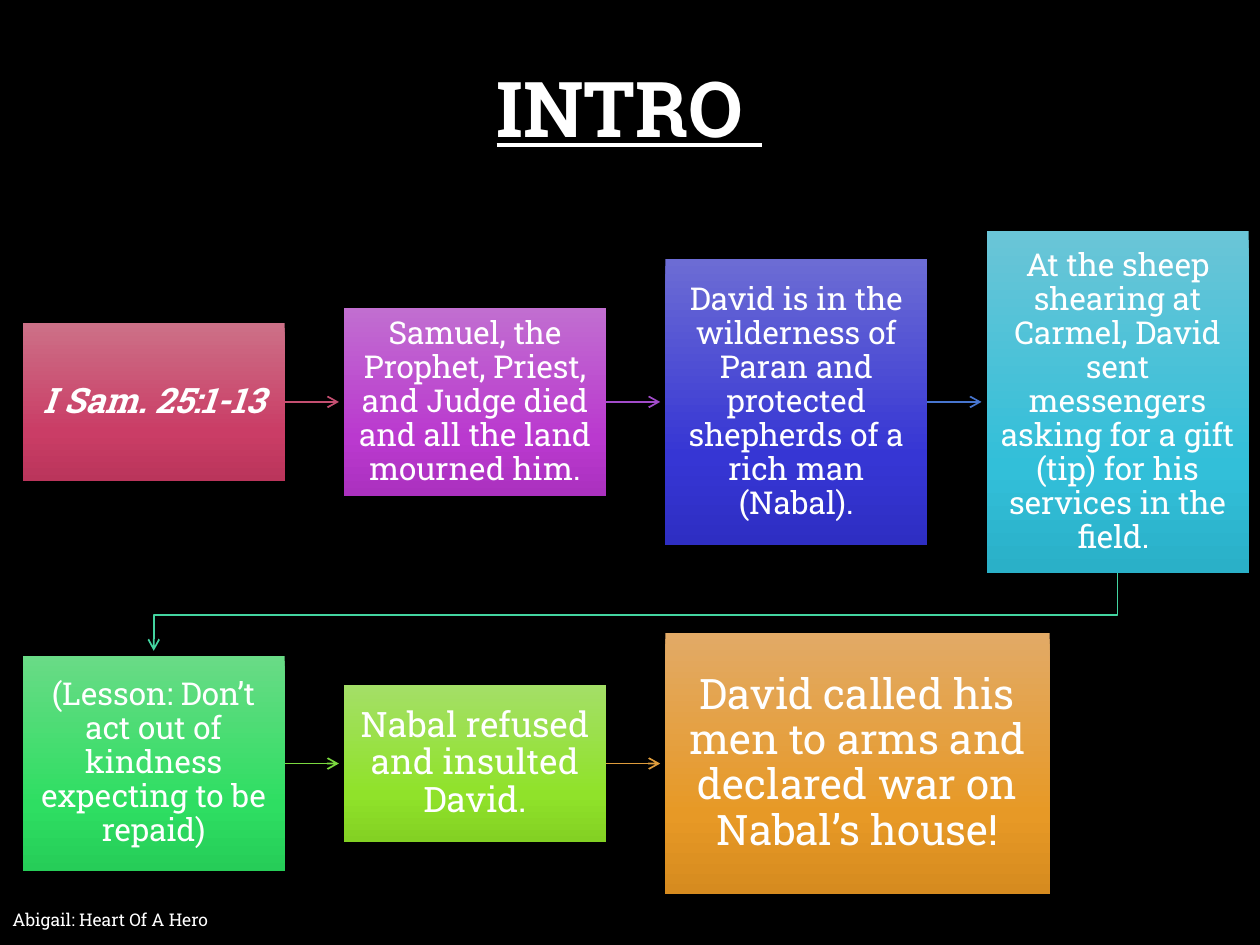
"""Build the intro slide: a two-row flow of story steps on black."""
from copy import deepcopy

from lxml import etree
from pptx import Presentation
from pptx.dml.color import RGBColor
from pptx.enum import shapes, text
from pptx.oxml.ns import qn
from pptx.util import Inches, Pt

FONT = "Roboto Slab"
BLACK = RGBColor(0, 0, 0)
WHITE = RGBColor(255, 255, 255)
ROSE = [RGBColor.from_string(c) for c in ("CC7087", "CA3D66", "BA355B")]
PLUM = [RGBColor.from_string(c) for c in ("C16ED0", "BA39CF", "AB31BF")]
BLUE = [RGBColor.from_string(c) for c in ("6C6CD4", "3636D4", "2E2EC3")]
AQUA = [RGBColor.from_string(c) for c in ("6AC5D7", "32BFD9", "2AB0C8")]
GREEN = [RGBColor.from_string(c) for c in ("69DB86", "2EDE62", "26CD58")]
LIME = [RGBColor.from_string(c) for c in ("A4DF67", "90E22A", "83D123")]
AMBER = [RGBColor.from_string(c) for c in ("E2AA66", "E79926", "D68B1F")]
ROSE_LINE = RGBColor(0xC5, 0x4F, 0x71)
PLUM_LINE = RGBColor(0xA2, 0x4B, 0xCA)
BLUE_LINE = RGBColor(0x47, 0x75, 0xCF)
TEAL_LINE = RGBColor(0x43, 0xD4, 0xA0)
LIME_LINE = RGBColor(0x7B, 0xD9, 0x40)
AMBER_LINE = RGBColor(0xDE, 0x9C, 0x3C)

LEFT, STEP, WIDE, GAP = 0.18, 2.55, 2.08, 0.04
TOP_MID, LOW_MID, TURN = 3.19, 6.06, 4.88

# words, height, width, size, bold italic, fill, colour of the arrow to the next step
TOP_ROW = [
    ("I Sam. 25:1-13", 1.25, WIDE, 20, True, ROSE, ROSE_LINE),
    ("Samuel, the Prophet, Priest, and Judge died and all the land mourned him.",
     1.49, WIDE, 18, False, PLUM, PLUM_LINE),
    ("David is in the wilderness of Paran and protected shepherds of a rich man (Nabal).",
     2.27, WIDE, 18, False, BLUE, BLUE_LINE),
    ("At the sheep shearing at Carmel, David sent messengers asking for a gift (tip) "
     "for his services in the field. ", 2.71, WIDE, 18, False, AQUA, None),
]
LOW_ROW = [
    ("(Lesson: Don’t act out of kindness expecting to be repaid)",
     1.71, WIDE, 18, False, GREEN, LIME_LINE),
    ("Nabal refused and insulted David.", 1.25, WIDE, 20, False, LIME, AMBER_LINE),
    ("David called his men to arms and declared war on Nabal’s house!",
     2.07, 3.05, 24, False, AMBER, None),
]


def write(frame, words, size, align, bold=False, italic=False, under=False):
    """Write one formatted run into a text frame and return its paragraph."""
    frame.word_wrap = True
    frame.auto_size = text.MSO_AUTO_SIZE.NONE
    frame.vertical_anchor = text.MSO_ANCHOR.MIDDLE
    para = frame.paragraphs[0]
    para.alignment = align
    run = para.add_run()
    run.text = words
    font = run.font
    font.name, font.size = FONT, Pt(size)
    font.bold, font.italic, font.underline = bold, italic, under
    font.color.rgb = WHITE
    return para


def shade(fill, tones):
    """Fill from top to bottom with three tones."""
    fill.gradient()
    fill.gradient_angle = 270
    first = fill.gradient_stops[0]._gs
    first.addnext(deepcopy(first))
    for stop, tone, place in zip(fill.gradient_stops, tones, (0, 0.69, 1)):
        stop.color.rgb = tone
        stop.position = place


def add_box(slide, left, mid, step):
    """Add one step, centred on the middle line of its row."""
    words, high, wide, size, strong, tones, _ = step
    box = slide.shapes.add_shape(
        shapes.MSO_SHAPE.RECTANGLE, Inches(left), Inches(mid - high / 2),
        Inches(wide), Inches(high))
    box.shadow.inherit = False
    box.line.fill.background()
    shade(box.fill, tones)
    frame = box.text_frame
    frame.margin_left = frame.margin_right = Inches(0.1)
    frame.margin_top = frame.margin_bottom = Inches(0.11)
    para = write(frame, words, size, text.PP_ALIGN.CENTER, strong, strong)
    para.line_spacing = 0.9


def style_line(line, color):
    """Give a line its colour, width and open arrowhead."""
    line.color.rgb = color
    line.width = Pt(1)
    etree.SubElement(line._get_or_add_ln(), qn("a:tailEnd"), type="arrow")


def add_arrow(slide, start, end, mid, color):
    """Add a level arrow between two steps."""
    arrow = slide.shapes.add_connector(
        shapes.MSO_CONNECTOR.STRAIGHT, Inches(start), Inches(mid),
        Inches(end), Inches(mid))
    style_line(arrow.line, color)
    etree.SubElement(arrow._element.spPr, qn("a:effectLst"))


def add_bend(slide, points, color):
    """Add a bent arrow through the given points."""
    spots = [(Inches(x), Inches(y)) for x, y in points]
    pen = slide.shapes.build_freeform(*spots[0])
    pen.add_line_segments(spots[1:], close=False)
    bend = pen.convert_to_shape()
    bend.fill.background()
    style_line(bend.line, color)
    bend.shadow.inherit = False


def add_row(slide, mid, steps):
    """Add a row of steps and the arrows between them."""
    for i, step in enumerate(steps):
        left = LEFT + STEP * i
        if step[-1] is not None:
            add_arrow(slide, left + WIDE, left + STEP - GAP, mid, step[-1])
        add_box(slide, left, mid, step)


def add_title(slide, words):
    """Place and format the title."""
    title = slide.shapes.title
    title.left, title.top = Inches(0.75), Inches(0.17)
    title.width, title.height = Inches(8.49), Inches(1.45)
    para = write(title.text_frame, words, 44, text.PP_ALIGN.CENTER, True, under=True)
    para.line_spacing = 0.9


def add_foot(slide, words):
    """Add the small line at the foot of the slide."""
    foot = slide.shapes.add_textbox(Inches(0), Inches(7.1), Inches(5.47), Inches(0.4))
    para = write(foot.text_frame, words, 10, text.PP_ALIGN.LEFT)
    para.space_after = Pt(6)


def main():
    """Build and save the slide."""
    deck = Presentation()
    deck.slide_width, deck.slide_height = Inches(10), Inches(7.5)
    slide = deck.slides.add_slide(deck.slide_layouts[5])
    back = slide.background.fill
    back.solid()
    back.fore_color.rgb = BLACK
    add_title(slide, "INTRO ")
    add_foot(slide, "Abigail: Heart Of A Hero")
    add_row(slide, TOP_MID, TOP_ROW)
    first = LEFT + WIDE / 2
    last = first + STEP * (len(TOP_ROW) - 1)
    start = TOP_MID + TOP_ROW[-1][1] / 2
    end = LOW_MID - LOW_ROW[0][1] / 2 - GAP
    add_bend(slide, [(last, start), (last, TURN), (first, TURN), (first, end)], TEAL_LINE)
    add_row(slide, LOW_MID, LOW_ROW)
    deck.save("out.pptx")


if __name__ == "__main__":
    main()
